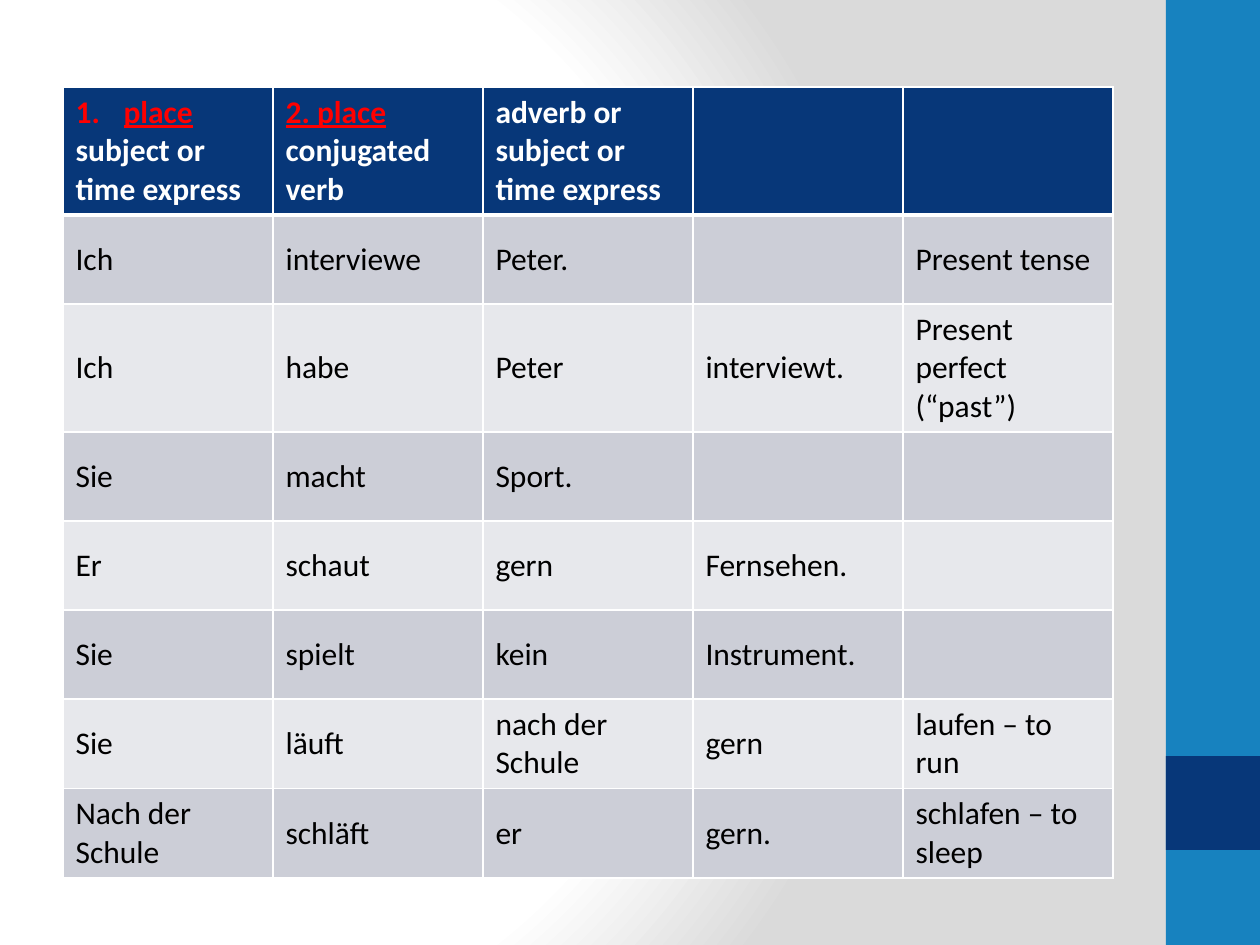
from pptx import Presentation
from pptx.dml.color import RGBColor
from pptx.enum.shapes import MSO_SHAPE as Shape
from pptx.enum.text import MSO_ANCHOR as Anchor
from pptx.oxml import parse_xml
from pptx.oxml.ns import nsdecls
from pptx.util import Emu, Pt

PX = 914400 // 126
WHITE = RGBColor(0xFF, 0xFF, 0xFF)
BLACK = RGBColor(0, 0, 0)
RED = RGBColor(0xFF, 0, 0)
BLUE = RGBColor(0x17, 0x82, 0xBF)
NAVY = RGBColor(0x07, 0x37, 0x79)
GREY = RGBColor(0xDA, 0xDA, 0xDA)
BAND_DARK = RGBColor(0xCC, 0xCE, 0xD7)
BAND_LIGHT = RGBColor(0xE7, 0xE8, 0xEC)

# Each header is (place title, numbered, further lines).
HEADERS = [
    ("place", True, ["subject or", "time express"]),
    ("2. place", False, ["conjugated verb"]),
    ("", False, ["adverb or", "subject or", "time express"]),
    ("", False, []),
    ("", False, []),
]
SENTENCES = [
    ["Ich", "interviewe", "Peter.", "", "Present tense"],
    ["Ich", "habe", "Peter", "interviewt.", "Present perfect (“past”)"],
    ["Sie", "macht", "Sport.", "", ""],
    ["Er", "schaut", "gern", "Fernsehen.", ""],
    ["Sie", "spielt", "kein", "Instrument.", ""],
    ["Sie", "läuft", "nach der Schule", "gern", "laufen – to run"],
    ["Nach der Schule", "schläft", "er", "gern.", "schlafen – to sleep"],
]


def px(value):
    return Emu(value * PX)


def set_background(slide):
    """Radial gradient, white on the left and grey on the right."""
    stops = "".join(
        f'<a:gs pos="{position}"><a:srgbClr val="{color}"/></a:gs>'
        for position, color in [(0, WHITE), (75000, WHITE), (100000, GREY)])
    slide.element.cSld.insert(0, parse_xml(
        f'<p:bg {nsdecls("p", "a")}><p:bgPr><a:gradFill rotWithShape="1">'
        f'<a:gsLst>{stops}</a:gsLst><a:path path="circle">'
        '<a:fillToRect l="20000" t="50000" r="100000" b="50000"/></a:path>'
        '</a:gradFill><a:effectLst/></p:bgPr></p:bg>'))


def add_block(slide, left, top, width, height, color):
    block = slide.shapes.add_shape(
        Shape.RECTANGLE, px(left), px(top), px(width), px(height))
    block.shadow.inherit = False
    block.fill.solid()
    block.fill.fore_color.rgb = color
    block.line.fill.background()


def style_cell(cell, color, top=1, bottom=1):
    """Fill the cell and give it white borders, widths in points."""
    cell.fill.solid()
    cell.fill.fore_color.rgb = color
    properties = cell._tc.get_or_add_tcPr()
    widths = {"lnL": 1, "lnR": 1, "lnT": top, "lnB": bottom}
    for index, (side, width) in enumerate(widths.items()):
        properties.insert(index, parse_xml(
            f'<a:{side} {nsdecls("a")} w="{Pt(width)}"><a:solidFill>'
            f'<a:srgbClr val="{WHITE}"/></a:solidFill></a:{side}>'))


def add_text(paragraph, text, color, bold=False, underline=False):
    run = paragraph.add_run()
    run.text = text
    font = run.font
    font.name, font.size, font.color.rgb = "Calibri", Pt(18), color
    font.bold, font.underline = bold, underline


def number_paragraph(paragraph):
    properties = paragraph._p.get_or_add_pPr()
    properties.set("marL", str(px(48)))
    properties.set("indent", str(-px(48)))
    properties.append(parse_xml(
        f'<a:buAutoNum {nsdecls("a")} type="arabicPeriod"/>'))


def fill_header(cell, title, numbered, lines):
    texts = ([title] if title else []) + lines
    for index, text in enumerate(texts):
        frame = cell.text_frame
        paragraph = frame.add_paragraph() if index else frame.paragraphs[0]
        is_title = text == title
        if is_title and numbered:
            number_paragraph(paragraph)
        add_text(paragraph, text, RED if is_title else WHITE, True, is_title)


def add_sentence_table(slide):
    rows, columns = len(SENTENCES) + 1, len(HEADERS)
    table = slide.shapes.add_table(
        rows, columns, px(63), px(87), px(columns * 210), px(rows * 89)).table
    for column, header in enumerate(HEADERS):
        cell = table.cell(0, column)
        style_cell(cell, NAVY, bottom=3)
        fill_header(cell, *header)
    for row, sentence in enumerate(SENTENCES, start=1):
        for column, text in enumerate(sentence):
            cell = table.cell(row, column)
            style_cell(cell, BAND_DARK if row % 2 else BAND_LIGHT,
                       top=3 if row == 1 else 1)
            cell.vertical_anchor = Anchor.MIDDLE
            if text:
                add_text(cell.text_frame.paragraphs[0], text, BLACK)


def main():
    presentation = Presentation()
    presentation.slide_width, presentation.slide_height = px(1260), px(945)
    slide = presentation.slides.add_slide(presentation.slide_layouts[6])
    set_background(slide)
    add_block(slide, 1166, 0, 94, 945, BLUE)
    add_block(slide, 1166, 756, 94, 94, NAVY)
    add_sentence_table(slide)
    presentation.save("out.pptx")


if __name__ == "__main__":
    main()
